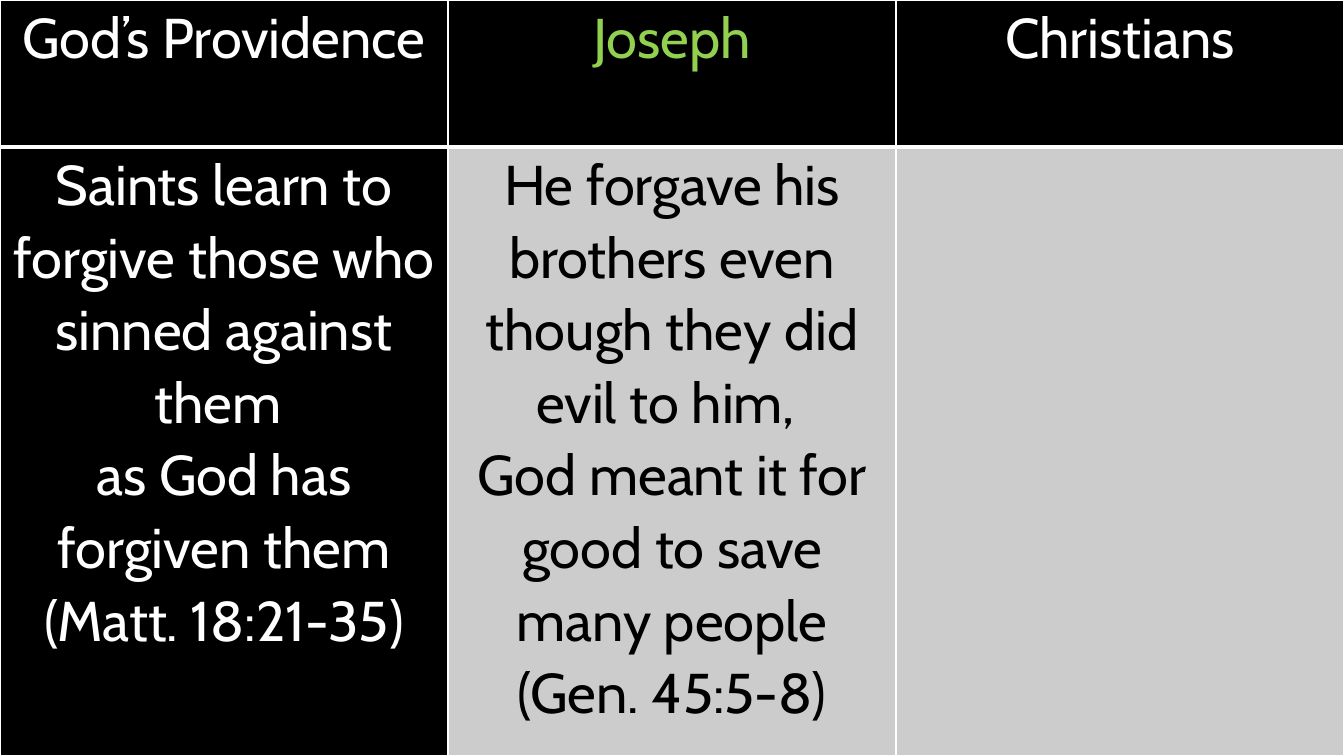
import dataclasses

import pptx
import pptx.dml.color
import pptx.enum.text
import pptx.oxml
import pptx.oxml.ns
import pptx.util


@dataclasses.dataclass(frozen=True)
class Theme:
    font: str = "Cabin"
    size: int = 40
    lead: float = 1.07
    black: str = "000000"
    white: str = "FFFFFF"
    green: str = "92D050"
    gray: str = "CCCCCC"
    thin: int = 1
    thick: int = 3


def px(n):
    return pptx.util.Emu(round(n * 914400 / 100.8))


def rgb(code):
    return pptx.dml.color.RGBColor.from_string(code)


class Deck:
    def __init__(self, theme, width, height):
        self.theme = theme
        self.prs = pptx.Presentation()
        self.prs.slide_width, self.prs.slide_height = px(width), px(height)
        self.slide = self.prs.slides.add_slide(self.prs.slide_layouts[6])

    def back(self, color):
        fill = self.slide.background.fill
        fill.solid()
        fill.fore_color.rgb = rgb(color)

    def table(self, cols, rows, cells):
        frame = self.slide.shapes.add_table(
            len(rows), len(cols), 0, 0, px(sum(cols)), px(sum(rows)))
        grid = frame.table
        for col, width in zip(grid.columns, cols):
            col.width = px(width)
        for row, height in zip(grid.rows, rows):
            row.height = px(height)
        for r, line in enumerate(cells):
            for c, (lines, ink, fill) in enumerate(line):
                cell = grid.cell(r, c)
                self.edges(cell, r)
                cell.fill.solid()
                cell.fill.fore_color.rgb = rgb(fill)
                self.words(cell, lines, ink)

    def edges(self, cell, row):
        # The rule between header and body is the thick one
        thin, thick = self.theme.thin, self.theme.thick
        top, base = (thin, thick) if row == 0 else (thick, thin)
        props = cell._tc.get_or_add_tcPr()
        for side, width in zip("LRTB", (thin, thin, top, base)):
            props.append(pptx.oxml.parse_xml(
                f'<a:ln{side} {pptx.oxml.ns.nsdecls("a")} w="{pptx.util.Pt(width)}">'
                f'<a:solidFill><a:srgbClr val="{self.theme.white}"/></a:solidFill>'
                f'</a:ln{side}>'))

    def words(self, cell, lines, ink):
        cell.margin_left = cell.margin_right = px(7)
        cell.margin_top = cell.margin_bottom = 0
        cell.text_frame.text = "\n".join(lines)
        for para in cell.text_frame.paragraphs:
            para.alignment = pptx.enum.text.PP_ALIGN.CENTER
            para.line_spacing = self.theme.lead
            para.font.name = self.theme.font
            para.font.size = pptx.util.Pt(self.theme.size)
            para.font.bold = False
            para.font.color.rgb = rgb(ink)


def main():
    t = Theme()
    deck = Deck(t, 1344, 756)
    deck.back(t.black)

    # Header row
    head = [
        (["God’s Providence"], t.white, t.black),
        (["Joseph"], t.green, t.black),
        (["Christians"], t.white, t.black),
    ]

    # Lesson row
    saints = ["Saints learn to forgive those who sinned against them ",
              "as God has forgiven them",
              "(Matt. 18:21-35)"]
    joseph = ["He forgave his brothers even though they did evil to him, ",
              "God meant it for good to save many people",
              "(Gen. 45:5-8)"]
    body = [
        (saints, t.white, t.black),
        (joseph, t.black, t.gray),
        ([], t.black, t.gray),
    ]

    deck.table([448] * 3, [147, 609], [head, body])
    deck.prs.save("out.pptx")


if __name__ == "__main__":
    main()
